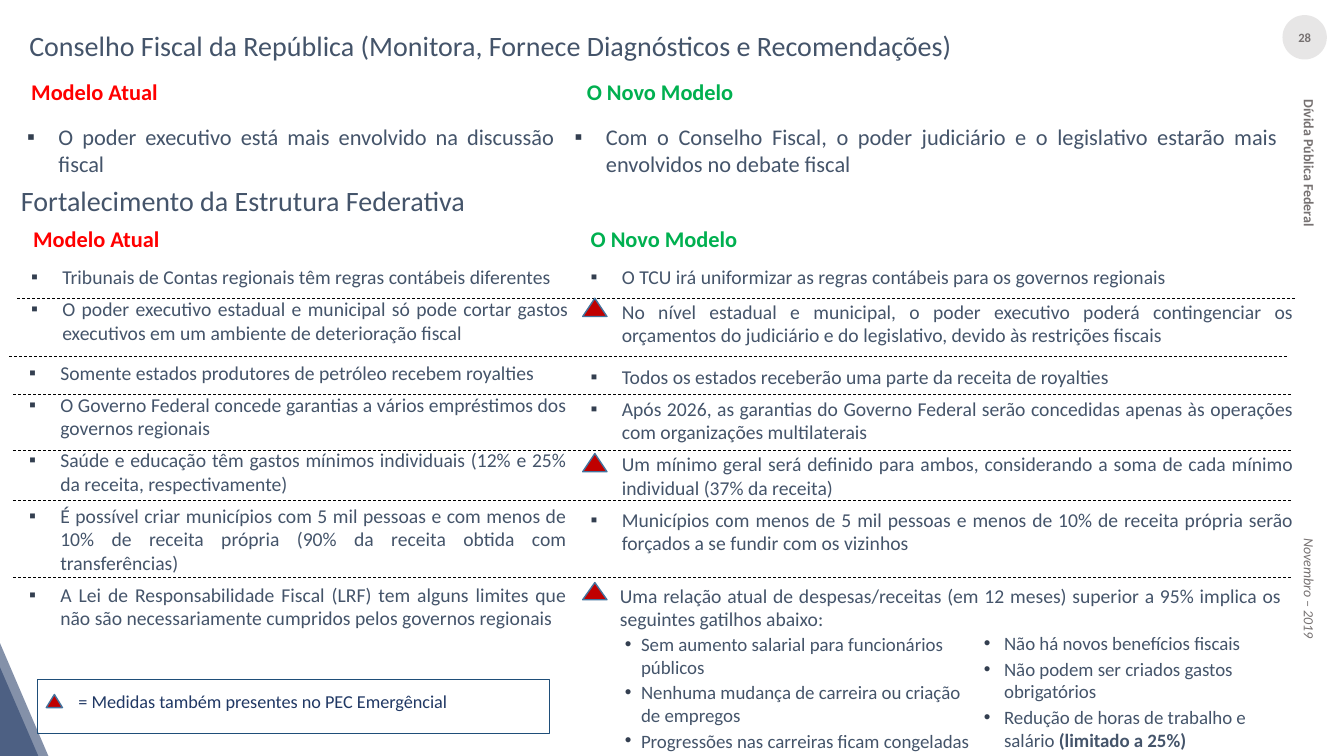
import dataclasses

import pptx
import pptx.dml.color
import pptx.enum.dml
import pptx.enum.shapes
import pptx.enum.text
import pptx.oxml
import pptx.oxml.ns
import pptx.util

Inches = pptx.util.Inches
Align = pptx.enum.text.PP_ALIGN
Anchor = pptx.enum.text.MSO_ANCHOR
Preset = pptx.enum.shapes.MSO_SHAPE

COLORS = {
    "text": "44546A", "bullet": "333F50", "current": "FF0000", "new": "00B050",
    "badge": "E7E6E6", "margin": "767171", "navy": "203864", "rule": "000000",
    "flag": "C00000", "flag_edge": "43739E", "frame": "1F4E79",
}

CURRENT_TOP = [
    "Tribunais de Contas regionais têm regras contábeis diferentes",
    "O poder executivo estadual e municipal só pode cortar gastos executivos em um ambiente de deterioração fiscal",
]
NEW_TOP = [
    "O TCU irá uniformizar as regras contábeis para os governos regionais",
    "No nível estadual e municipal, o poder executivo poderá contingenciar os orçamentos do judiciário e do legislativo, devido às restrições fiscais",
]
CURRENT_REST = [
    "Somente estados produtores de petróleo recebem royalties",
    "O Governo Federal concede garantias a vários empréstimos dos governos regionais",
    "Saúde e educação têm gastos mínimos individuais (12% e 25% da receita, respectivamente)",
    "É possível criar municípios com 5 mil pessoas e com menos de 10% de receita própria (90% da receita obtida com transferências)",
    "A Lei de Responsabilidade Fiscal (LRF) tem alguns limites que não são necessariamente cumpridos pelos governos regionais",
]
NEW_REST = [
    "Todos os estados receberão uma parte da receita de royalties",
    "Após 2026, as garantias do Governo Federal serão concedidas apenas às operações com organizações multilaterais",
    "Um mínimo geral será definido para ambos, considerando a soma de cada mínimo individual (37% da receita)",
    "Municípios com menos de 5 mil pessoas e menos de 10% de receita própria serão forçados a se fundir com os vizinhos",
]
TRIGGER = "Uma relação atual de despesas/receitas (em 12 meses) superior a 95% implica os seguintes gatilhos abaixo:"
CAREER_LIMITS = [
    "Sem aumento salarial para funcionários públicos",
    "Nenhuma mudança de carreira ou criação de empregos",
    "Progressões nas carreiras ficam congeladas",
]
SPENDING_LIMITS = [
    "Não há novos benefícios fiscais",
    "Não podem ser criados gastos obrigatórios",
    "Redução de horas de trabalho e salário ",
]


@dataclasses.dataclass
class Box:
    left: float
    top: float
    width: float
    height: float

    def inner(self, right, down, width, height):
        return Box(self.left + right, self.top + down, width, height)

    def lengths(self):
        return [Inches(round(value, 2)) for value in dataclasses.astuple(self)]


def color(name):
    return pptx.dml.color.RGBColor.from_string(COLORS[name])


def add_bullet(para, mark, indent, hanging):
    props = para._p.get_or_add_pPr()
    props.set("marL", str(Inches(indent)))
    props.set("indent", str(-Inches(hanging)))
    namespace = pptx.oxml.ns.nsdecls("a")
    for element in (
        f'<a:buClr {namespace}><a:srgbClr val="{COLORS["bullet"]}"/></a:buClr>',
        f'<a:buFont {namespace} typeface="Arial"/>',
        f'<a:buChar {namespace} char="{mark}"/>',
    ):
        props.append(pptx.oxml.parse_xml(element))


def write(shape, texts, size=14, ink="text", bold=False, italic=False, align=Align.LEFT,
          anchor=Anchor.TOP, after=0, bullet=None, level=0, bold_end=""):
    frame = shape.text_frame
    frame.auto_size = pptx.enum.text.MSO_AUTO_SIZE.NONE
    frame.word_wrap = True
    frame.vertical_anchor = anchor
    for index, text in enumerate(texts):
        para = frame.paragraphs[0] if index == 0 else frame.add_paragraph()
        para.alignment = align
        para.level = level
        para.space_before = pptx.util.Pt(0)
        para.space_after = pptx.util.Pt(after)
        if bullet:
            add_bullet(para, *bullet)
        pieces = [(text, bold)]
        if bold_end and index == len(texts) - 1:
            pieces.append((bold_end, True))
        for words, weight in pieces:
            span = para.add_run()
            span.text = words
            span.font.name = "Calibri"
            span.font.size = pptx.util.Pt(size)
            span.font.bold = weight
            span.font.italic = italic
            span.font.color.rgb = color(ink)


def add_text(page, box, texts, holder=None, **style):
    shape = page.placeholders[holder] if holder is not None else page.shapes.add_textbox(*box.lengths())
    shape.left, shape.top, shape.width, shape.height = box.lengths()
    write(shape, texts, **style)
    return shape


def add_list(page, box, texts, after=6, size=14, holder=None):
    add_text(page, box, texts, holder, size=size, after=after, align=Align.JUSTIFY, bullet=("▪", 0.31, 0.31))


def add_preset(page, box, preset, fill=None, edge=None):
    shape = page.shapes.add_shape(preset, *box.lengths())
    shape.shadow.inherit = False
    if fill:
        shape.fill.solid()
        shape.fill.fore_color.rgb = color(fill)
    else:
        shape.fill.background()
    if edge:
        shape.line.color.rgb = color(edge)
        shape.line.width = pptx.util.Pt(1)
    else:
        shape.line.fill.background()
    return shape


def add_flag(page, box):
    add_preset(page, box, Preset.ISOSCELES_TRIANGLE, "flag", "flag_edge")


def add_rule(page, left, top, width):
    rule = page.shapes.add_connector(
        pptx.enum.shapes.MSO_CONNECTOR.STRAIGHT,
        Inches(left), Inches(top), Inches(left + width), Inches(top))
    rule.line.color.rgb = color("rule")
    rule.line.width = pptx.util.Pt(0.5)
    rule.line.dash_style = pptx.enum.dml.MSO_LINE.DASH
    rule._element.spPr.append(pptx.oxml.parse_xml(f'<a:effectLst {pptx.oxml.ns.nsdecls("a")}/>'))


def draw_margin(page, box):
    badge = add_preset(page, box.inner(0.06, 0, 0.44, 0.44), Preset.OVAL, "badge")
    badge.text_frame.margin_left = badge.text_frame.margin_right = 0
    write(badge, ["28"], size=9, ink="margin", bold=True, align=Align.CENTER, anchor=Anchor.MIDDLE)
    for text, middle, bold in (("Dívida Pública Federal", 1.47, True), ("Novembro – 2019", 5.69, False)):
        label = add_text(page, box.inner(-0.69, middle - 0.15, 2, 0.3), [text], size=10, ink="margin",
                         bold=bold, italic=not bold, align=Align.CENTER)
        label.rotation = 90


def draw_corner(page, box):
    bottom = box.top + box.height
    for width, height in ((box.width, box.height), (0.38, 0.88)):
        builder = page.shapes.build_freeform(0, Inches(bottom - height), scale=1.0)
        builder.add_line_segments([(Inches(width), Inches(bottom)), (0, Inches(bottom))], close=True)
        wedge = builder.convert_to_shape()
        wedge.shadow.inherit = False
        wedge.fill.solid()
        wedge.fill.fore_color.rgb = color("navy")
        wedge.line.fill.background()
        tint = wedge._element.spPr.find(".//" + pptx.oxml.ns.qn("a:srgbClr"))
        tint.append(pptx.oxml.parse_xml(f'<a:alpha {pptx.oxml.ns.nsdecls("a")} val="55000"/>'))


def draw_headings(page, box, gap, holders=(None, None)):
    headings = (("Modelo Atual", "current", 0), ("O Novo Modelo", "new", gap))
    for (text, ink, right), holder in zip(headings, holders):
        add_text(page, box.inner(right, 0, 2.05, box.height), [text], holder, size=16, ink=ink, bold=True)


def draw_council(page, box):
    add_text(page, box.inner(0.02, 0, 10.29, 0.44),
             ["Conselho Fiscal da República (Monitora, Fornece Diagnósticos e Recomendações)"], 0, size=20)
    draw_headings(page, box.inner(0.04, 0.49, box.width, 0.37), 5.51, (1, 3))
    add_list(page, box.inner(0, 0.94, 5.43, 0.64),
             ["O poder executivo está mais envolvido na discussão fiscal"], size=16, holder=2)
    add_list(page, box.inner(5.43, 0.94, 7.17, 0.64),
             ["Com o Conselho Fiscal, o poder judiciário e o legislativo estarão mais envolvidos no debate fiscal"],
             size=16, holder=4)


def draw_federation(page, box):
    add_text(page, box.inner(0, 0, 5, 0.44), ["Fortalecimento da Estrutura Federativa"], size=20)
    draw_headings(page, box.inner(0.12, 0.41, box.width, 0.37), 5.53)
    add_list(page, box.inner(0.1, 0.81, 5.53, 0.89), CURRENT_TOP)
    add_list(page, box.inner(5.65, 0.81, 7.17, 0.92), NEW_TOP, after=8)
    add_list(page, box.inner(0.08, 1.76, 5.53, 2.79), CURRENT_REST)
    add_list(page, box.inner(5.65, 1.8, 7.17, 2), NEW_REST)
    for right, down in ((0.06, 1.19), (-0.02, 1.77), (0.02, 2.14), (0.02, 2.7), (0.02, 3.19), (0.02, 3.96)):
        add_rule(page, box.left + right, box.top + down, 12.67)
    for down in (1.19, 2.73):
        add_flag(page, box.inner(5.67, down, 0.24, 0.18))


def draw_triggers(page, box):
    add_list(page, box.inner(0.29, 0, 7.07, 0.57), [TRIGGER])
    add_flag(page, box.inner(0.33, 0.04, 0.24, 0.17))
    add_text(page, box.inner(0, 0.49, 4.37, 1.27), CAREER_LIMITS, size=13.5, after=2, level=1,
             bullet=("•", 0.81, 0.16))
    add_text(page, box.inner(3.82, 0.48, 3.38, 1.28), SPENDING_LIMITS, size=13.5, after=2, level=1,
             bullet=("•", 0.59, 0.2), bold_end="(limitado a 25%)")


def draw_legend(page, box):
    add_preset(page, box, Preset.RECTANGLE, edge="frame")
    add_flag(page, box.inner(0.09, 0.15, 0.16, 0.13))
    add_text(page, box.inner(0.31, 0.06, 4.7, 0.32), ["= Medidas também presentes no PEC Emergêncial"],
             size=13, ink="navy")


def main():
    deck = pptx.Presentation()
    deck.slide_width, deck.slide_height = Inches(13.33), Inches(7.5)
    page = deck.slides.add_slide(deck.slide_layouts.get_by_name("Comparison"))
    draw_margin(page, Box(12.66, 0.15, 0.57, 6.4))
    draw_corner(page, Box(0, 6.38, 0.48, 1.12))
    draw_council(page, Box(0.17, 0.23, 12.6, 1.58))
    draw_federation(page, Box(0.11, 1.77, 12.82, 4.55))
    draw_triggers(page, Box(5.45, 5.74, 7.36, 1.76))
    draw_legend(page, Box(0.37, 6.74, 5.08, 0.54))
    deck.save("out.pptx")


if __name__ == "__main__":
    main()
